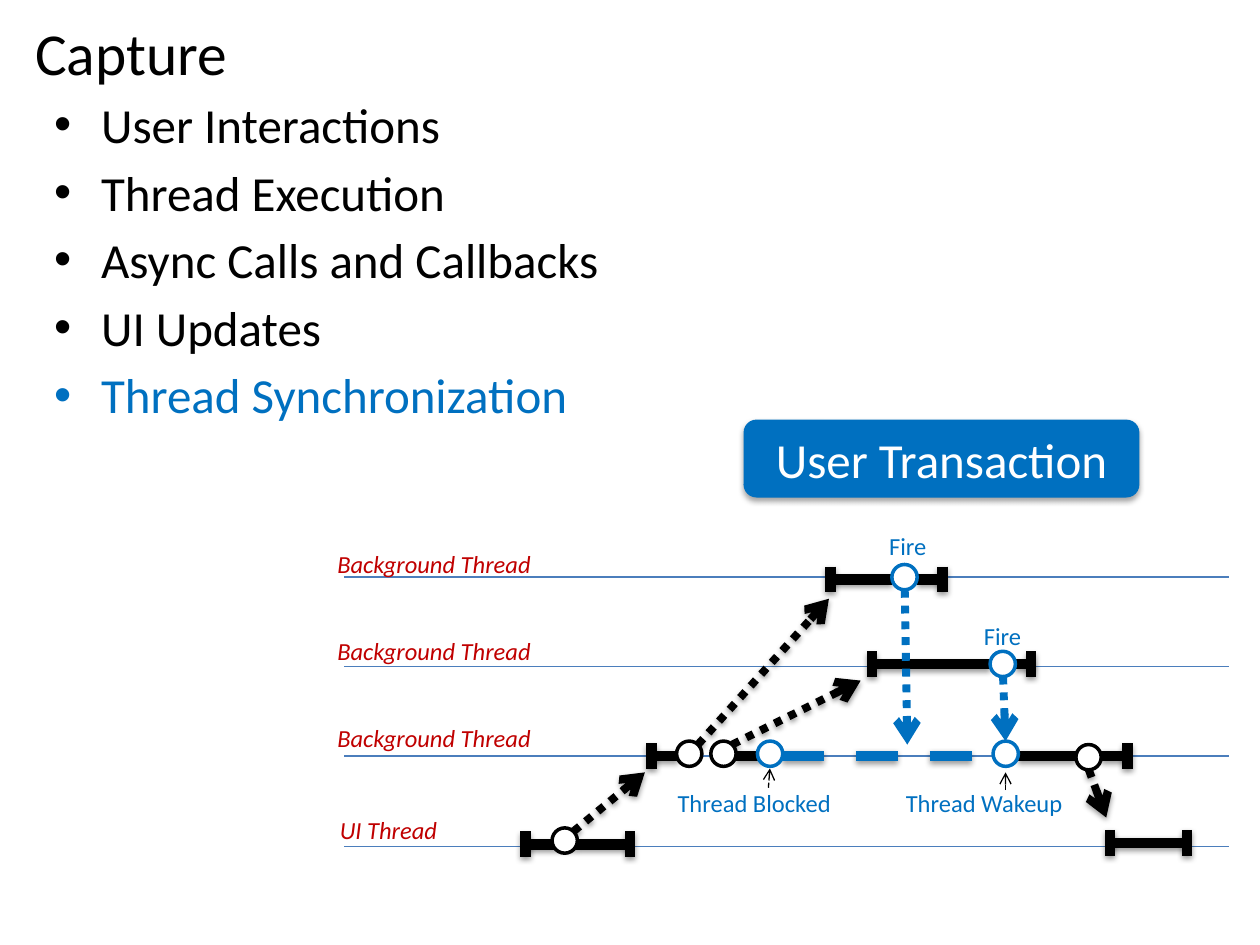
"""Build the Capture slide: a bullet list above a timeline of threads in one user transaction."""
from dataclasses import dataclass
from typing import Any, Optional

import lxml.etree
import pptx
import pptx.dml.color
import pptx.enum.dml
import pptx.enum.shapes
import pptx.enum.text
import pptx.oxml.ns
import pptx.util

Cm, Pt = pptx.util.Cm, pptx.util.Pt
Dash = pptx.enum.dml.MSO_LINE
Align = pptx.enum.text.PP_ALIGN
Preset = pptx.enum.shapes.MSO_SHAPE

BLACK, WHITE, BLUE, RED, LANE_BLUE = "000000", "FFFFFF", "0070C0", "C00000", "4B7EBC"
CAP_HALF = 0.26
EVENT_SIZE = 0.51


@dataclass
class Stroke:
    color: str
    width: float
    dash: Optional[Any] = None
    arrow: bool = False
    shadow: bool = False


@dataclass
class Execution:
    y: float
    caps: tuple
    runs: tuple


@dataclass
class Event:
    left: float
    top: float
    color: str


@dataclass
class Arrow:
    ends: tuple
    stroke: Stroke


@dataclass
class Label:
    text: str
    box: tuple
    color: str
    size: float = 14
    italic: bool = False
    align: Any = Align.LEFT


RUNNING = Stroke(BLACK, 6, shadow=True)
BLOCKED = Stroke(BLUE, 6, Dash.DASH, shadow=True)
CALL = Stroke(BLACK, 4.5, Dash.ROUND_DOT, arrow=True, shadow=True)
SIGNAL = Stroke(BLUE, 4.5, Dash.ROUND_DOT, arrow=True)
POINTER = Stroke(BLACK, 0.75, Dash.DASH_DOT, arrow=True)
LANE = Stroke(LANE_BLUE, 0.75)

LANES = (11.63, 13.44, 15.24, 17.07)
EXECUTIONS = (
    Execution(17.02, (10.59, 12.7), ((10.59, 11.63), (11.63, 12.7))),
    Execution(15.24, (13.13, 22.73),
              ((13.16, 13.67), (14.83, 15.37), (20.52, 21.69), (22.2, 22.71))),
    Execution(13.39, (17.58, 20.78), ((17.63, 19.96), (20.47, 20.85))),
    Execution(11.68, (16.74, 19), ((16.71, 17.98), (18.49, 19))),
    Execution(16.99, (22.38, 23.93), ((22.38, 23.88),)),
)
ARROWS = (
    Arrow((15.77, 15.24, 19.84, 15.24), BLOCKED),
    Arrow((11.56, 16.76, 13, 15.57), CALL),
    Arrow((14.07, 15.01, 16.71, 12.07), CALL),
    Arrow((14.76, 15.01, 17.35, 13.72), CALL),
    Arrow((18.24, 11.89, 18.29, 15.01), SIGNAL),
    Arrow((20.22, 13.64, 20.27, 14.94), SIGNAL),
    Arrow((21.95, 15.52, 22.3, 16.48), CALL),
    Arrow((20.27, 15.93, 20.27, 15.57), POINTER),
    Arrow((15.49, 15.88, 15.52, 15.49), POINTER),
)
EVENTS = (
    Event(13.64, 14.94, BLACK), Event(14.33, 14.94, BLACK),
    Event(15.27, 14.94, BLUE), Event(20.02, 14.94, BLUE),
    Event(17.98, 11.38, BLUE), Event(19.96, 13.13, BLUE),
    Event(11.13, 16.69, BLACK), Event(21.69, 15.01, BLACK),
)
LABELS = (
    *(Label("Background Thread", (6.55, top, 4.52, 0.86), RED, italic=True)
      for top in (10.95, 12.7, 14.45)),
    Label("UI Thread", (6.6, 16.31, 2.51, 0.86), RED, italic=True),
    Label("Fire", (17.65, 10.59, 1.3, 0.86), BLUE, align=Align.CENTER),
    Label("Fire", (19.56, 12.4, 1.3, 0.86), BLUE, align=Align.CENTER),
    Label("Thread Blocked", (13.34, 15.77, 3.73, 0.86), BLUE, align=Align.CENTER),
    Label("Thread Wakeup", (17.96, 15.77, 3.76, 0.86), BLUE, align=Align.CENTER),
    Label("Capture", (0.46, 0.2, 4.42, 1.7), BLACK, size=34),
)
CAPTURED = (
    ("User Interactions", BLACK), ("Thread Execution", BLACK),
    ("Async Calls and Callbacks", BLACK), ("UI Updates", BLACK),
    ("Thread Synchronization", BLUE),
)


def rgb(value: str) -> pptx.dml.color.RGBColor:
    return pptx.dml.color.RGBColor.from_string(value)


def add_xml(parent: Any, tag: str, **attributes: str) -> Any:
    return lxml.etree.SubElement(parent, pptx.oxml.ns.qn(tag), attributes)


def add_shadow(effects: Any, distance: int, alpha: int) -> None:
    shadow = add_xml(effects, "a:outerShdw", blurRad="40000", dist=str(distance),
                     dir="5400000", rotWithShape="0")
    add_xml(add_xml(shadow, "a:srgbClr", val=BLACK), "a:alpha", val=str(alpha))


def draw_line(slide: Any, ends: tuple, stroke: Stroke) -> None:
    connector = slide.shapes.add_connector(
        pptx.enum.shapes.MSO_CONNECTOR.STRAIGHT, *map(Cm, ends))
    connector.line.color.rgb = rgb(stroke.color)
    for key, value in {"width": Pt(stroke.width), "dash_style": stroke.dash}.items():
        setattr(connector.line, key, value)
    if stroke.arrow:
        add_xml(connector.line._get_or_add_ln(), "a:tailEnd", type="arrow")
    effects = add_xml(connector._element.spPr, "a:effectLst")
    if stroke.shadow:
        add_shadow(effects, 20000, 38000)


def draw_execution(slide: Any, execution: Execution) -> None:
    y = execution.y
    for start, end in execution.runs:
        draw_line(slide, (start, y, end, y), RUNNING)
    for x in execution.caps:
        draw_line(slide, (x, y - CAP_HALF, x, y + CAP_HALF), RUNNING)


def draw_event(slide: Any, event: Event) -> None:
    circle = slide.shapes.add_shape(
        Preset.OVAL, *map(Cm, (event.left, event.top, EVENT_SIZE, EVENT_SIZE)))
    circle.shadow.inherit = False
    circle.fill.solid()
    circle.fill.fore_color.rgb = rgb(WHITE)
    circle.line.color.rgb = rgb(event.color)
    circle.line.width = Pt(2)


def write(paragraph: Any, text: str, color: str, size: float, italic: bool = False) -> None:
    run = paragraph.add_run()
    run.text = text
    for key, value in {"name": "Calibri", "size": Pt(size), "italic": italic}.items():
        setattr(run.font, key, value)
    run.font.color.rgb = rgb(color)


def draw_label(slide: Any, label: Label) -> None:
    frame = slide.shapes.add_textbox(*map(Cm, label.box)).text_frame
    frame.word_wrap = False
    frame.auto_size = pptx.enum.text.MSO_AUTO_SIZE.SHAPE_TO_FIT_TEXT
    frame.paragraphs[0].alignment = label.align
    write(frame.paragraphs[0], label.text, label.color, label.size, label.italic)


def draw_captured(slide: Any) -> None:
    frame = slide.shapes.add_textbox(*map(Cm, (0.84, 1.78, 16.71, 9.09))).text_frame
    frame.word_wrap = True
    for index, (text, color) in enumerate(CAPTURED):
        paragraph = frame.add_paragraph() if index else frame.paragraphs[0]
        paragraph.space_before = Pt(5)
        properties = paragraph._p.get_or_add_pPr()
        for key, value in {"marL": Cm(0.95), "indent": Cm(-0.95)}.items():
            properties.set(key, str(value))
        add_xml(properties, "a:buFont", typeface="Arial")
        add_xml(properties, "a:buChar", char="•")
        write(paragraph, text, color, 28)


def draw_transaction(slide: Any) -> None:
    banner = slide.shapes.add_shape(
        Preset.ROUNDED_RECTANGLE, *map(Cm, (14.99, 8.46, 7.98, 1.57)))
    banner.fill.solid()
    banner.fill.fore_color.rgb = rgb(BLUE)
    banner.line.fill.background()
    banner.shadow.inherit = False
    add_shadow(banner._element.spPr.find(pptx.oxml.ns.qn("a:effectLst")), 23000, 35000)
    banner.text_frame.vertical_anchor = pptx.enum.text.MSO_ANCHOR.MIDDLE
    banner.text_frame.paragraphs[0].alignment = Align.CENTER
    write(banner.text_frame.paragraphs[0], "User Transaction", WHITE, 28)


def main() -> None:
    deck = pptx.Presentation()
    deck.slide_width, deck.slide_height = Cm(25.4), Cm(19.05)
    slide = deck.slides.add_slide(deck.slide_layouts[6])
    for y in LANES:
        draw_line(slide, (24.77, y, 6.93, y), LANE)
    for execution in EXECUTIONS:
        draw_execution(slide, execution)
    for arrow in ARROWS:
        draw_line(slide, arrow.ends, arrow.stroke)
    for event in EVENTS:
        draw_event(slide, event)
    for label in LABELS:
        draw_label(slide, label)
    draw_captured(slide)
    draw_transaction(slide)
    deck.save("out.pptx")


if __name__ == "__main__":
    main()
